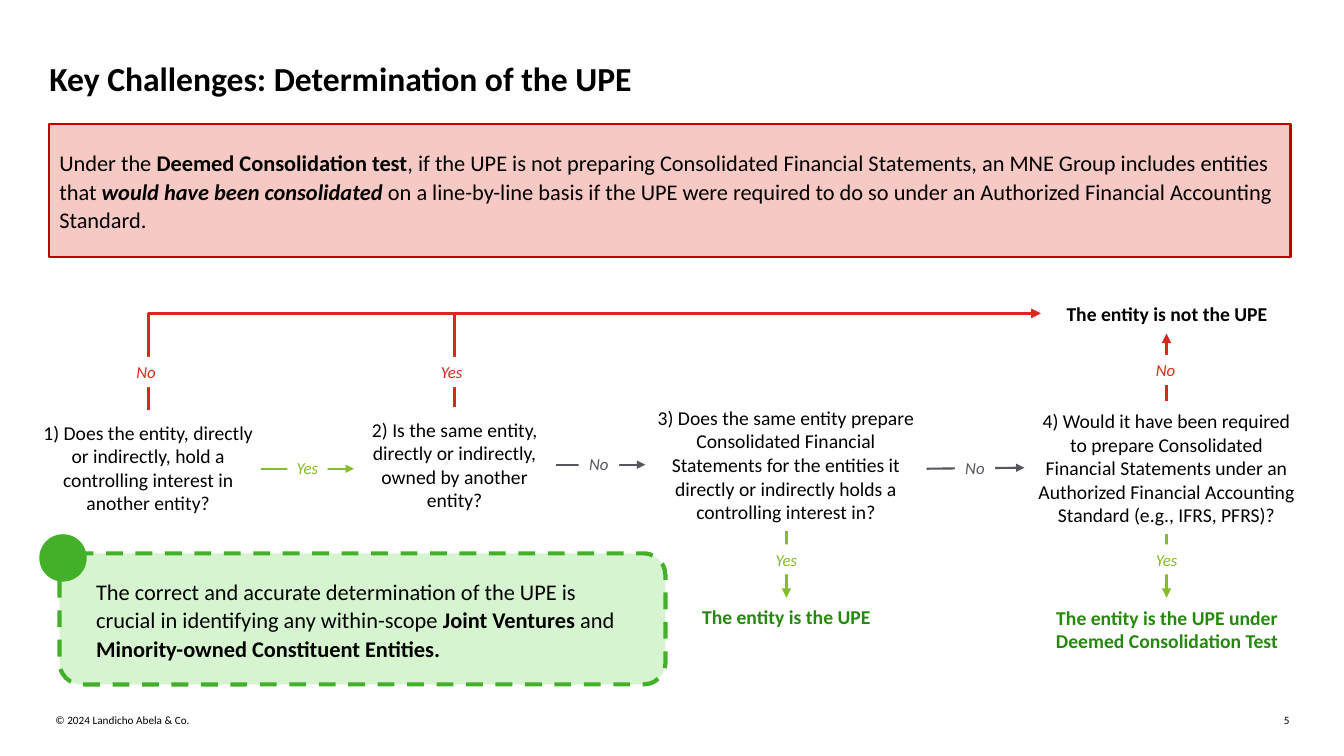
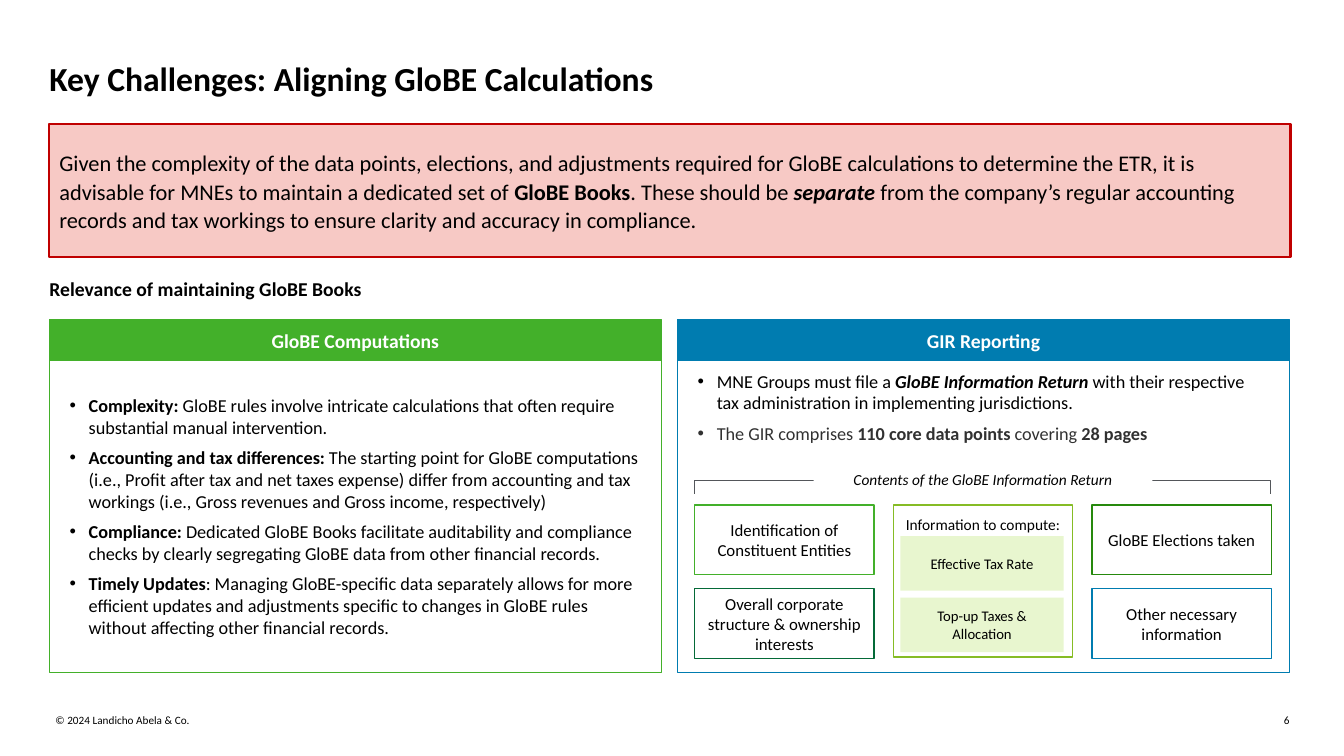
"""Build two slides on determining the UPE and aligning GloBE calculations."""
from dataclasses import dataclass

from lxml import etree
from pptx import Presentation
from pptx.dml.color import RGBColor as Color
from pptx.enum.dml import MSO_LINE as Dash
from pptx.enum.shapes import MSO_CONNECTOR as Link, MSO_SHAPE as Kind
from pptx.enum.text import MSO_ANCHOR as Anchor, PP_ALIGN as Align
from pptx.oxml.ns import qn
from pptx.util import Inches, Pt


@dataclass(frozen=True)
class Theme:
    font: str = "Calibri"
    title_size: float = 24
    lead_size: float = 16
    body_size: float = 14
    bullet_size: float = 13
    card_size: float = 12
    caption_size: float = 11
    detail_size: float = 10.5
    footer_size: float = 8
    black: str = "000000"
    charcoal: str = "313131"
    grey: str = "53565A"
    white: str = "FFFFFF"
    red: str = "DA291C"
    dark_red: str = "C00000"
    pink: str = "F7C9C5"
    green: str = "43B02A"
    lime: str = "86BC25"
    dark_green: str = "26890D"
    forest: str = "046A38"
    mint: str = "D7F4D0"
    pale_lime: str = "E8F6CF"
    blue: str = "007CB0"


class Deck:
    def __init__(self, theme):
        self.theme = theme
        self.presentation = Presentation()
        self.presentation.slide_width = Inches(13.33)
        self.presentation.slide_height = Inches(7.5)
        self.page = None

    def start_page(self, title, number, banner):
        theme = self.theme
        self.page = self.presentation.slides.add_slide(self.presentation.slide_layouts[6])
        flush = (0, 0, 0, 0)
        self.text((0.55, 7.08, 5.86, 0.13), ["© 2024 Landicho Abela & Co."],
                  size=theme.footer_size, inset=flush)
        self.text((12.45, 7.08, 0.34, 0.13), [str(number)],
                  size=theme.footer_size, align=Align.RIGHT, inset=flush)
        self.text((0.49, 0.42, 8, 0.55), [title], size=theme.title_size,
                  bold=True, anchor=Anchor.BOTTOM, inset=flush)
        box = self.shape((0.49, 1.23, 12.31, 1.32), theme.pink, theme.dark_red, 1.5)
        self.set_text(box, [banner], size=theme.lead_size, anchor=Anchor.MIDDLE,
                      spacing=1.06, after=6)

    def shape(self, at, fill=None, line=None, width=0.75, kind=Kind.RECTANGLE):
        box = self.page.shapes.add_shape(kind, *map(Inches, at))
        box.shadow.inherit = False
        if fill:
            box.fill.solid()
            box.fill.fore_color.rgb = Color.from_string(fill)
        else:
            box.fill.background()
        if line:
            box.line.color.rgb = Color.from_string(line)
            box.line.width = Pt(width)
        else:
            box.line.fill.background()
        return box

    def text(self, at, paragraphs, **style):
        box = self.page.shapes.add_textbox(*map(Inches, at))
        return self.set_text(box, paragraphs, **style)

    def set_text(self, box, paragraphs, size, color=None, bold=None, italic=None,
                 align=Align.LEFT, anchor=Anchor.TOP, inset=(0.1, 0.1, 0.1, 0.1),
                 spacing=None, after=None, bullet=False):
        frame = box.text_frame
        frame.word_wrap = True
        frame.vertical_anchor = anchor
        (frame.margin_left, frame.margin_top,
         frame.margin_right, frame.margin_bottom) = map(Inches, inset)
        for index, content in enumerate(paragraphs):
            para = frame.add_paragraph() if index else frame.paragraphs[0]
            para.alignment = align
            if spacing:
                para.line_spacing = spacing
            if after:
                para.space_after = Pt(after)
            if bullet:
                self.add_bullet(para)
            font = para.font
            font.name, font.size = self.theme.font, Pt(size)
            font.bold, font.italic = bold, italic
            font.color.rgb = Color.from_string(color or self.theme.black)
            for words, marks in [(content, "")] if isinstance(content, str) else content:
                span = para.add_run()
                span.text = words
                if "b" in marks:
                    span.font.bold = True
                if "i" in marks:
                    span.font.italic = True
        return frame

    def add_bullet(self, para):
        props = para._p.get_or_add_pPr()
        props.set("marL", str(Inches(0.19)))
        props.set("indent", str(Inches(-0.19)))
        etree.SubElement(props, qn("a:buFont")).set("typeface", "Arial")
        etree.SubElement(props, qn("a:buChar")).set("char", "•")

    def arrow(self, start, end, color, width, link=Link.STRAIGHT):
        line = self.page.shapes.add_connector(link, *map(Inches, start + end))
        line.line.color.rgb = Color.from_string(color)
        line.line.width = Pt(width)
        etree.SubElement(line.line._get_or_add_ln(), qn("a:tailEnd")).set("type", "triangle")
        etree.SubElement(line._element.spPr, qn("a:effectLst"))
        return line

    def corner_arrow(self, start, end, color, width):
        middle_x, middle_y = (start[0] + end[0]) / 2, (start[1] + end[1]) / 2
        half_rise, half_run = (start[1] - end[1]) / 2, (end[0] - start[0]) / 2
        line = self.arrow((middle_x + half_rise, middle_y + half_run),
                          (middle_x - half_rise, middle_y - half_run),
                          color, width, Link.ELBOW)
        props = line._element.spPr
        props.find(qn("a:xfrm")).set("rot", "5400000")
        props.find(qn("a:prstGeom")).set("prst", "bentConnector2")

    def answer(self, center, words, color):
        box = self.shape((center[0] - 0.2, center[1] - 0.15, 0.4, 0.3), self.theme.white)
        self.set_text(box, [words], size=self.theme.card_size, color=color, italic=True,
                      align=Align.CENTER, inset=(0, 0.05, 0, 0.05))

    def card(self, at, words, fill, line=None, size=None):
        box = self.shape(at, fill, line, 1)
        self.set_text(box, [words], size=size or self.theme.card_size, align=Align.CENTER,
                      anchor=Anchor.MIDDLE, inset=(0.1, 0.05, 0.1, 0.05))

    def panel(self, left, heading, color, bullets, anchor):
        theme = self.theme
        body = self.shape((left, 3.17, 6.07, 3.5), theme.white, color)
        frame = self.set_text(body, bullets, size=theme.bullet_size, anchor=anchor,
                              inset=(0.2, 0.5, 0.2, 0.1), after=6, bullet=True)
        header = self.shape((left, 3.17, 6.07, 0.41), color)
        self.set_text(header, [heading], size=theme.body_size, color=theme.white, bold=True,
                      align=Align.CENTER, anchor=Anchor.MIDDLE)
        return frame


def build_determination(deck):
    theme = deck.theme
    deck.start_page("Key Challenges: Determination of the UPE", 5, [
        ("Under the ", ""), ("Deemed Consolidation test", "b"),
        (", if the UPE is not preparing Consolidated Financial Statements, an MNE Group "
         "includes entities that ", ""),
        ("would have been consolidated ", "bi"),
        ("on a line-by-line basis if the UPE were required to do so under an Authorized "
         "Financial Accounting Standard.", "")])

    questions = [
        ((0.33, 4.07, 2.28, 1.14), "1) Does the entity, directly or indirectly, hold a "
         "controlling interest in another entity?"),
        ((3.51, 4.04, 2, 1.14), "2) Is the same entity, directly or indirectly, owned by "
         "another entity?"),
        ((6.4, 3.95, 2.79, 1.32), "3) Does the same entity prepare Consolidated Financial "
         "Statements for the entities it directly or indirectly holds a controlling "
         "interest in?"),
        ((10.16, 3.98, 2.82, 1.32), "4) Would it have been required to prepare Consolidated "
         "Financial Statements under an Authorized Financial Accounting Standard "
         "(e.g., IFRS, PFRS)?")]
    outcomes = [
        ((10.32, 2.91, 2.51, 0.4), "The entity is not the UPE", theme.black),
        ((6.77, 5.93, 2.06, 0.37), "The entity is the UPE", theme.dark_green),
        ((10.23, 5.93, 2.69, 0.62), "The entity is the UPE under Deemed Consolidation Test",
         theme.dark_green)]
    centered = dict(size=theme.body_size, align=Align.CENTER, anchor=Anchor.MIDDLE)
    for at, words in questions:
        deck.text(at, [words], **centered)
    for at, words, color in outcomes:
        deck.text(at, [words], color=color, bold=True, **centered)

    steps = [
        (deck.arrow, (2.59, 4.65), (3.51, 4.65), theme.lime, 1.5, "Yes", (3.05, 4.64)),
        (deck.arrow, (5.51, 4.61), (6.4, 4.61), theme.grey, 1.5, "No", (5.94, 4.6)),
        (deck.arrow, (9.19, 4.65), (10.16, 4.64), theme.grey, 1.5, "No", (9.67, 4.64)),
        (deck.arrow, (7.8, 5.27), (7.8, 5.93), theme.lime, 2.25, "Yes", (7.8, 5.55)),
        (deck.arrow, (11.57, 5.3), (11.57, 5.93), theme.lime, 2.25, "Yes", (11.57, 5.55)),
        (deck.arrow, (11.57, 3.98), (11.57, 3.31), theme.red, 2.25, "No", (11.56, 3.67)),
        (deck.corner_arrow, (1.47, 4.07), (10.32, 3.11), theme.red, 2.25, "No", (1.45, 3.69)),
        (deck.corner_arrow, (4.51, 4.04), (10.32, 3.11), theme.red, 2.25, "Yes", (4.48, 3.69))]
    for draw, start, end, color, width, words, center in steps:
        draw(start, end, color, width)
        deck.answer(center, words, color)

    note = deck.shape((0.59, 5.49, 6.01, 1.3), theme.mint, theme.green, 3,
                      Kind.ROUNDED_RECTANGLE)
    note.line.dash_style = Dash.DASH
    deck.set_text(note, [[
        ("The correct and accurate determination of the UPE is crucial in identifying any "
         "within-scope ", ""),
        ("Joint Ventures", "b"), (" and ", ""),
        ("Minority-owned Constituent Entities.", "b")]],
        size=theme.lead_size, anchor=Anchor.MIDDLE, inset=(0.3, 0.1, 0.2, 0.1), spacing=1.06)
    deck.shape((0.39, 5.3, 0.47, 0.47), theme.green, kind=Kind.OVAL)


def build_calculations(deck):
    theme = deck.theme
    deck.start_page("Key Challenges: Aligning GloBE Calculations", 6, [
        ("Given the complexity of the data points, elections, and adjustments required for "
         "GloBE calculations to determine the ETR, it is advisable for MNEs to maintain a "
         "dedicated set of ", ""),
        ("GloBE Books", "b"), (". These should be ", ""), ("separate ", "bi"),
        ("from the company’s regular accounting records and tax workings to ensure clarity "
         "and accuracy in compliance.", "")])
    deck.text((0.49, 2.75, 4.48, 0.24), ["Relevance of maintaining GloBE Books"],
              size=theme.body_size, bold=True, inset=(0, 0, 0, 0))

    deck.panel(0.49, "GloBE Computations", theme.green, [
        [("Complexity: ", "b"),
         ("GloBE rules involve intricate calculations that often require substantial manual "
          "intervention.", "")],
        [("Accounting and tax differences:", "b"),
         (" The starting point for GloBE computations (i.e., Profit after tax and net taxes "
          "expense) differ from accounting and tax workings (i.e., Gross revenues and Gross "
          "income, respectively)", "")],
        [("Compliance: ", "b"),
         ("Dedicated GloBE Books facilitate auditability and compliance checks by clearly "
          "segregating GloBE data from other financial records.", "")],
        [("Timely Updates", "b"),
         (": Managing GloBE-specific data separately allows for more efficient updates and "
          "adjustments specific to changes in GloBE rules without affecting other financial "
          "records.", "")]], Anchor.MIDDLE)
    reporting = deck.panel(6.72, "GIR Reporting", theme.blue, [
        [("MNE Groups must file a ", ""), ("GloBE Information Return", "bi"),
         (" with their respective tax administration in implementing jurisdictions.", "")],
        [("The GIR comprises ", ""), ("110 core data points ", "b"),
         ("covering ", ""), ("28 pages", "b")]], Anchor.TOP)
    reporting.paragraphs[1].font.color.rgb = Color.from_string(theme.charcoal)

    bracket = deck.shape((9.68, 1.98, 0.13, 5.71), line=theme.grey, kind=Kind.RIGHT_BRACKET)
    bracket.adjustments[0] = 0
    bracket.rotation = 270
    caption = deck.shape((8.07, 4.61, 3.36, 0.29), theme.white)
    deck.set_text(caption, ["Contents of the GloBE Information Return"],
                  size=theme.caption_size, italic=True, align=Align.CENTER,
                  anchor=Anchor.MIDDLE, spacing=1.06)

    left, top, column_step, row_step = 6.89, 5.01, 1.97, 0.83
    cards = [
        (0, 0, "Identification of Constituent Entities", theme.green),
        (0, 1, "Overall corporate structure & ownership interests", theme.forest),
        (2, 0, "GloBE Elections taken", theme.dark_green),
        (2, 1, "Other necessary information", theme.blue)]
    for column, row, words, color in cards:
        deck.card((left + column * column_step, top + row * row_step, 1.78, 0.69),
                  words, theme.white, color)
    compute = deck.shape((left + column_step, top, 1.78, 1.51), theme.white, theme.lime, 1)
    deck.set_text(compute, ["Information to compute:"], size=theme.caption_size,
                  align=Align.CENTER, inset=(0.1, 0.1, 0.1, 0.05))
    for row, words in enumerate(["Effective Tax Rate", "Top-up Taxes & Allocation"]):
        deck.card((8.93, 5.32 + row * 0.61, 1.62, 0.54), words, theme.pale_lime,
                  size=theme.detail_size)


def main():
    deck = Deck(Theme())
    build_determination(deck)
    build_calculations(deck)
    deck.presentation.save("out.pptx")


if __name__ == "__main__":
    main()
